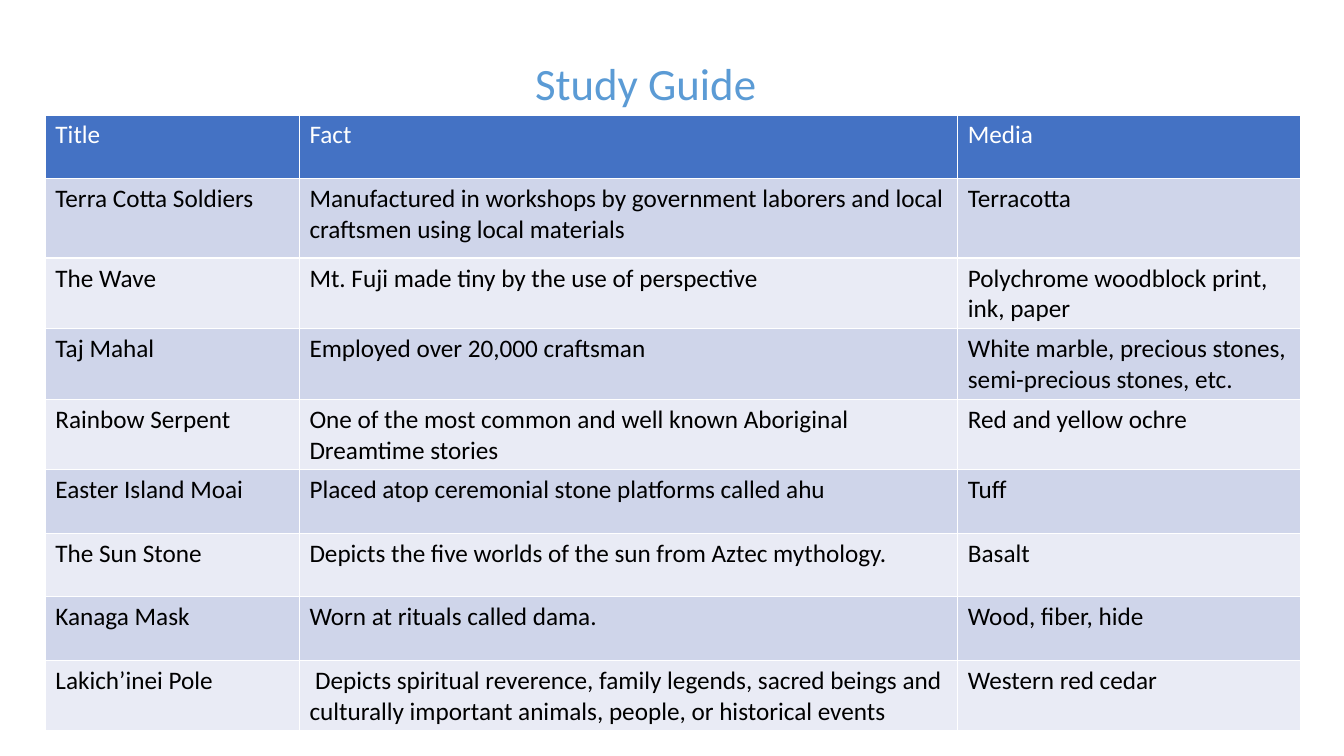
import lxml.etree
import pptx
import pptx.dml.color
import pptx.enum.text
import pptx.oxml.ns
import pptx.util

Inches = pptx.util.Inches

COLUMN_WIDTHS = [2.52, 6.53, 3.4]
ROW_HEIGHTS = [0.63, 0.79, 0.63, 0.65, 0.63, 0.63, 0.63, 0.63, 0.65]
HEADER_FILL = "4472C4"
BAND_FILLS = ["CFD5EA", "E9EBF5"]
ARTWORKS = [
    ("Title", "Fact", "Media"),
    ("Terra Cotta Soldiers",
     "Manufactured in workshops by government laborers and local craftsmen using local materials",
     "Terracotta"),
    ("The Wave", "Mt. Fuji made tiny by the use of perspective",
     "Polychrome woodblock print, ink, paper"),
    ("Taj Mahal", "Employed over 20,000 craftsman",
     "White marble, precious stones, semi-precious stones, etc."),
    ("Rainbow Serpent",
     "One of the most common and well known Aboriginal Dreamtime stories",
     "Red and yellow ochre"),
    ("Easter Island Moai", "Placed atop ceremonial stone platforms called ahu", "Tuff"),
    ("The Sun Stone", "Depicts the five worlds of the sun from Aztec mythology.", "Basalt"),
    ("Kanaga Mask", "Worn at rituals called dama.", "Wood, fiber, hide"),
    ("Lakich’inei Pole",
     " Depicts spiritual reverence, family legends, sacred beings and culturally important "
     "animals, people, or historical events",
     "Western red cedar"),
]


def color(value):
    return pptx.dml.color.RGBColor.from_string(value)


def write_text(frame, text, size=18, fill="000000", align=pptx.enum.text.PP_ALIGN.LEFT):
    para = frame.paragraphs[0]
    para.alignment = align
    span = para.add_run()
    span.text = text
    span.font.name = "Calibri"
    span.font.size = pptx.util.Pt(size)
    span.font.bold = False
    span.font.color.rgb = color(fill)


def set_borders(cell, value, width):
    """Draw all four cell borders; lines must precede the fill in the XML."""
    properties = cell._tc.get_or_add_tcPr()
    for index, side in enumerate(["lnL", "lnR", "lnT", "lnB"]):
        line = lxml.etree.Element(pptx.oxml.ns.qn("a:" + side), w=str(pptx.util.Pt(width)))
        fill = lxml.etree.SubElement(line, pptx.oxml.ns.qn("a:solidFill"))
        lxml.etree.SubElement(fill, pptx.oxml.ns.qn("a:srgbClr"), val=value)
        properties.insert(index, line)


def place_title(page, left, top, width, height):
    title = page.shapes.title
    title.left, title.top = Inches(left), Inches(top)
    title.width, title.height = Inches(width), Inches(height)
    frame = title.text_frame
    frame.word_wrap = True
    frame.auto_size = pptx.enum.text.MSO_AUTO_SIZE.SHAPE_TO_FIT_TEXT
    frame.vertical_anchor = pptx.enum.text.MSO_ANCHOR.TOP
    write_text(frame, "Study Guide", size=32, fill="5B9BD5",
               align=pptx.enum.text.PP_ALIGN.CENTER)


def place_artwork_table(page, left, top, width, height):
    table = page.shapes.add_table(len(ARTWORKS), len(COLUMN_WIDTHS), Inches(left),
                                  Inches(top), Inches(width), Inches(height)).table
    for column, column_width in zip(table.columns, COLUMN_WIDTHS):
        column.width = Inches(column_width)
    for row_index, artwork in enumerate(ARTWORKS):
        row = table.rows[row_index]
        row.height = Inches(ROW_HEIGHTS[row_index])
        is_header = row_index == 0
        for cell, text in zip(row.cells, artwork):
            cell.fill.solid()
            cell.fill.fore_color.rgb = color(
                HEADER_FILL if is_header else BAND_FILLS[(row_index - 1) % 2])
            set_borders(cell, "FFFFFF", 1)
            write_text(cell.text_frame, text, fill="FFFFFF" if is_header else "000000")


def main():
    deck = pptx.Presentation()
    deck.slide_width, deck.slide_height = Inches(13.33), Inches(7.5)
    page = deck.slides.add_slide(deck.slide_layouts.get_by_name("Title Only"))
    place_artwork_table(page, 0.45, 1.14, sum(COLUMN_WIDTHS), sum(ROW_HEIGHTS))
    place_title(page, 2.77, 0.5, 7.27, 0.64)
    deck.save("out.pptx")


if __name__ == "__main__":
    main()
